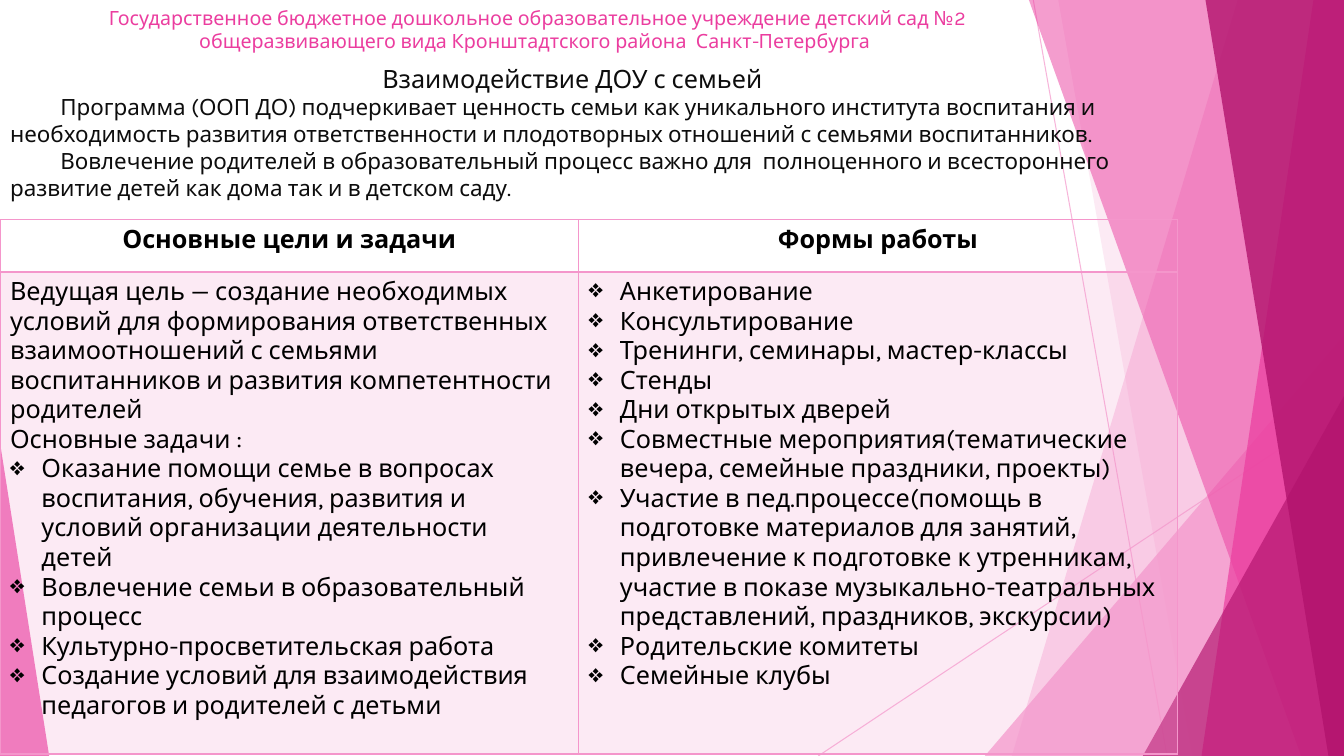
from pptx import Presentation, util as u
from pptx.dml.color import RGBColor
from pptx.enum import shapes, text
from pptx.oxml.ns import qn
from lxml import etree

LIGHT_PINK = RGBColor(0xF4, 0x96, 0xCB)
PINK = RGBColor(0xEB, 0x3D, 0x9F)
PLUM = RGBColor(0xB2, 0x13, 0x6D)
INK = RGBColor(0x0D, 0x0D, 0x0D)
BLACK = RGBColor(0, 0, 0)
WIDTH, HEIGHT = 33.87, 19.05
CENTER, LEFT = text.PP_ALIGN.CENTER, text.PP_ALIGN.LEFT
BULLET = "❖"

ORGANISATION = ("Государственное бюджетное дошкольное образовательное учреждение детский сад №2 "
                "общеразвивающего вида Кронштадтского района  Санкт-Петербурга ")
TOPIC = "Взаимодействие ДОУ с семьей"
INTRO = [
    "Программа (ООП ДО) подчеркивает ценность семьи как уникального института воспитания "
    "и необходимость развития ответственности и плодотворных отношений с семьями воспитанников.",
    "Вовлечение родителей в образовательный процесс важно для  полноценного и всестороннего "
    "развитие детей как дома так и в детском саду.",
]
HEADINGS = ["Основные цели и задачи", "Формы работы"]
GOALS = [
    "Ведущая цель — создание необходимых условий для формирования ответственных "
    "взаимоотношений с семьями воспитанников и развития компетентности родителей",
    "Основные задачи :",
]
TASKS = [
    "Оказание помощи семье в вопросах воспитания, обучения, развития и условий "
    "организации деятельности  детей",
    "Вовлечение семьи в образовательный процесс",
    "Культурно-просветительская работа",
    "Создание условий для взаимодействия педагогов и родителей с детьми",
]
FORMS = [
    "Анкетирование",
    "Консультирование",
    "Тренинги, семинары, мастер-классы",
    "Стенды",
    "Дни открытых дверей",
    "Совместные мероприятия(тематические вечера, семейные праздники, проекты)",
    "Участие в пед.процессе(помощь в подготовке материалов для занятий, привлечение "
    "к подготовке к утренникам, участие в показе музыкально-театральных представлений, "
    "праздников, экскурсии)",
    "Родительские комитеты",
    "Семейные клубы",
]


class SlideBuilder:
    font = {"name": "Karla", "bold": False}

    def __init__(self, page):
        self.page = page

    def set_alpha(self, element, percent):
        for color in element.iter(qn("a:srgbClr")):
            etree.SubElement(color, qn("a:alpha"), val=str(percent * 1000))

    def tint(self, shape, color, alpha):
        shape.shadow.inherit = False
        shape.fill.solid()
        shape.fill.fore_color.rgb = color
        shape.line.fill.background()
        self.set_alpha(shape.element, alpha)

    def ray(self, start, end):
        points = [u.Cm(value) for value in (*start, *end)]
        line = self.page.shapes.add_connector(shapes.MSO_CONNECTOR.STRAIGHT, *points)
        line.line.color.rgb = LIGHT_PINK
        line.line.width = u.Pt(0.75)
        self.set_alpha(line.element, 70)
        etree.SubElement(line.element.spPr, qn("a:effectLst"))

    def facet(self, top, bottom, color, alpha):
        corners = [(WIDTH, 0), (WIDTH, HEIGHT), (bottom, HEIGHT)]
        outline = self.page.shapes.build_freeform(u.Cm(top), 0)
        outline.add_line_segments([(u.Cm(x), u.Cm(y)) for x, y in corners])
        self.tint(outline.convert_to_shape(), color, alpha)

    def triangle(self, place, apex, color, alpha):
        shape = self.page.shapes.add_shape(
            shapes.MSO_SHAPE.ISOSCELES_TRIANGLE, *map(u.Cm, place))
        shape.adjustments[0] = apex
        self.tint(shape, color, alpha)

    def placeholder(self, index, place, anchor):
        box = self.page.placeholders[index]
        box.element.getparent().append(box.element)
        for name, value in zip(("left", "top", "width", "height"), place):
            setattr(box, name, u.Cm(value))
        frame = box.text_frame
        formats = {"word_wrap": True, "auto_size": text.MSO_AUTO_SIZE.NONE,
                   "vertical_anchor": anchor}
        for name, value in formats.items():
            setattr(frame, name, value)
        return frame

    def paragraph(self, frame, words, size, color, align=LEFT, before=0,
                  margin=0, indent=0, bullet=None, bold=False):
        para = frame.add_paragraph() if frame.text else frame.paragraphs[0]
        layout = {"alignment": align, "line_spacing": 1.0,
                  "space_before": u.Pt(before), "space_after": u.Pt(0)}
        for name, value in layout.items():
            setattr(para, name, value)
        span = para.add_run()
        span.text = words
        for name, value in {**self.font, "size": u.Pt(size), "bold": bold}.items():
            setattr(span.font, name, value)
        span.font.color.rgb = color
        props = para._p.get_or_add_pPr()
        props.set("marL", str(u.Cm(margin)))
        props.set("indent", str(u.Cm(indent)))
        if bullet:
            etree.SubElement(props, qn("a:buChar"), char=bullet)
        else:
            etree.SubElement(props, qn("a:buNone"))

    def table(self, left, top, widths, heights):
        frame = self.page.shapes.add_table(
            len(heights), len(widths), u.Cm(left), u.Cm(top),
            u.Cm(sum(widths)), u.Cm(sum(heights)))
        grid = frame.table
        grid.first_row = grid.horz_banding = False
        for column, width in zip(grid.columns, widths):
            column.width = u.Cm(width)
        for row, height in zip(grid.rows, heights):
            row.height = u.Cm(height)
        return grid

    def style_cell(self, cell, filled, bottom):
        props = cell._tc.get_or_add_tcPr()
        if filled:
            cell.fill.solid()
            cell.fill.fore_color.rgb = LIGHT_PINK
            self.set_alpha(props, 20)
        else:
            cell.fill.background()
        for place, (side, width) in enumerate(
                {"lnL": 1, "lnR": 1, "lnT": 1, "lnB": bottom}.items()):
            edge = etree.Element(qn(f"a:{side}"), w=str(u.Pt(width)))
            fill = etree.SubElement(edge, qn("a:solidFill"))
            etree.SubElement(fill, qn("a:srgbClr"), val=str(LIGHT_PINK))
            props.insert(place, edge)


def main():
    deck = Presentation()
    deck.slide_width, deck.slide_height = u.Cm(WIDTH), u.Cm(HEIGHT)
    builder = SlideBuilder(deck.slides.add_slide(deck.slide_layouts[1]))

    builder.ray((26.04, 0), (29.41, HEIGHT))
    builder.ray((WIDTH, 10.24), (20.62, HEIGHT))
    builder.facet(31.19, 25.5, LIGHT_PINK, 36)
    builder.facet(26.67, 30.05, LIGHT_PINK, 20)
    builder.triangle((24.82, 8.46, 9.05, 10.59), 1, LIGHT_PINK, 72)
    builder.facet(25.93, 32.79, PINK, 50)
    builder.facet(33.1, 30.28, PINK, 70)
    builder.facet(30.38, 33.48, PLUM, 80)
    builder.triangle((28.8, 9.98, 5.07, 9.07), 1, PLUM, 66)
    builder.triangle((0, 11.15, 1.24, 7.9), 0, PINK, 70)

    title = builder.placeholder(0, (1.6, 0, 23.88, 1.47), text.MSO_ANCHOR.MIDDLE)
    builder.paragraph(title, ORGANISATION, 14, PINK, CENTER)
    body = builder.placeholder(1, (0, 1.47, 28.85, 15.29), text.MSO_ANCHOR.TOP)
    builder.paragraph(body, TOPIC, 18, INK, CENTER, before=10)
    for words in INTRO:
        builder.paragraph(body, words, 16, INK, indent=1.27)

    grid = builder.table(0, 5.54, [14.58, 15.09], [1.32, 12.14])
    columns = [(GOALS, TASKS), ([], FORMS)]
    for index, (heading, (plain, listed)) in enumerate(zip(HEADINGS, columns)):
        head, content = grid.cell(0, index), grid.cell(1, index)
        builder.style_cell(head, False, 2)
        builder.style_cell(content, True, 1)
        builder.paragraph(head.text_frame, heading, 18, BLACK, CENTER, bold=True)
        for words in plain:
            builder.paragraph(content.text_frame, words, 18, BLACK)
        for words in listed:
            builder.paragraph(content.text_frame, words, 18, BLACK,
                              margin=0.79, indent=-0.79, bullet=BULLET)

    deck.save("out.pptx")


if __name__ == "__main__":
    main()
